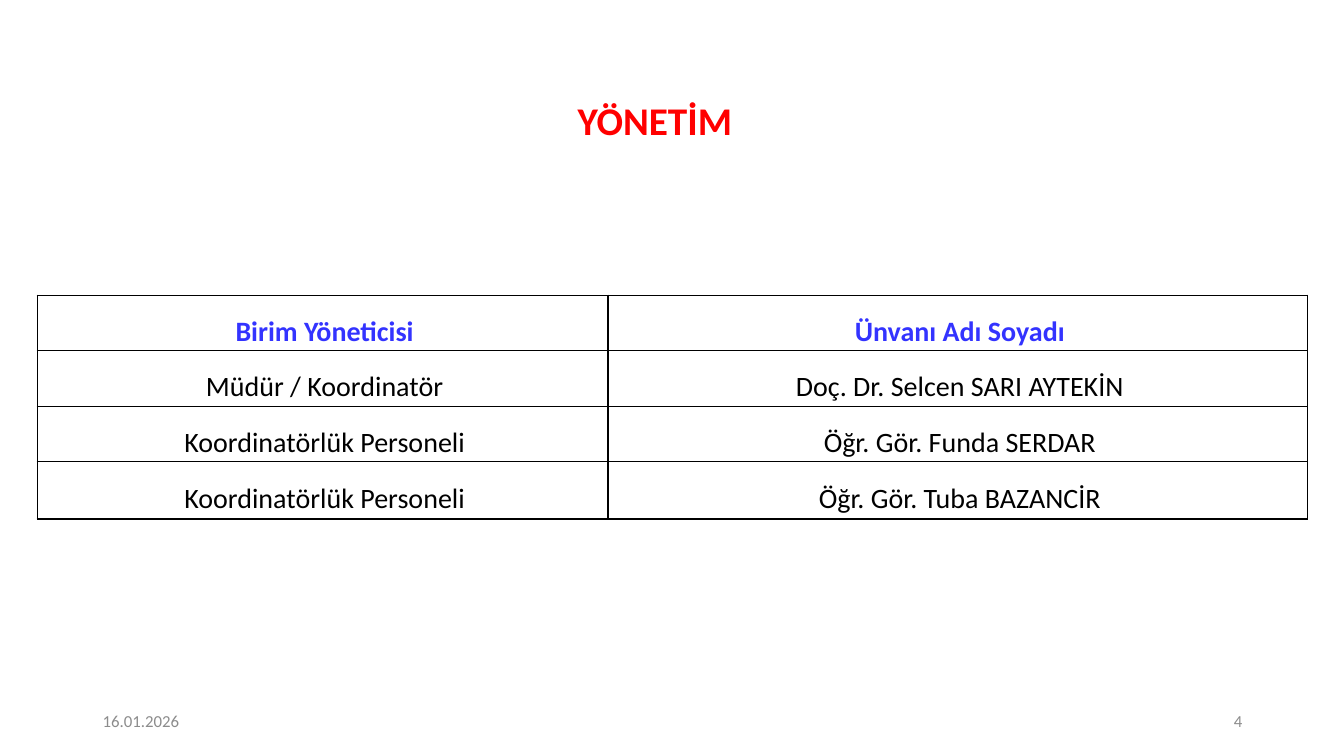
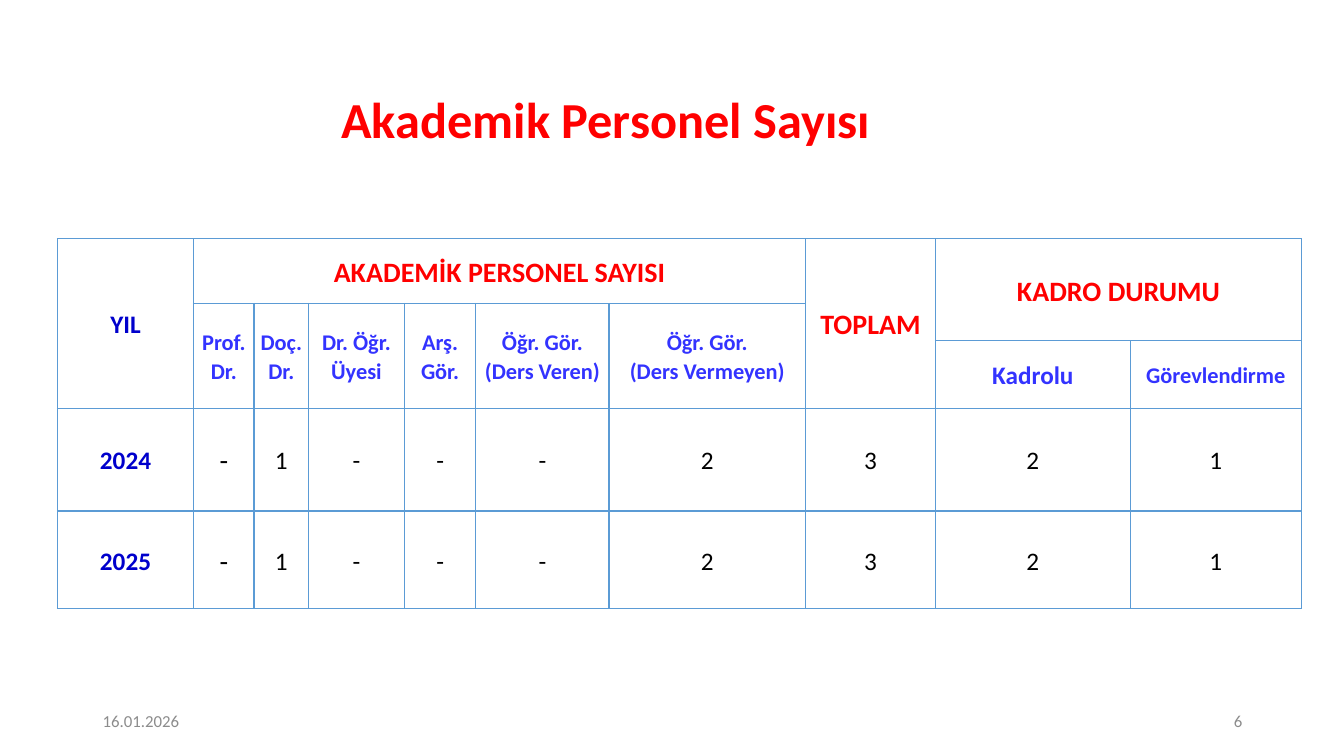
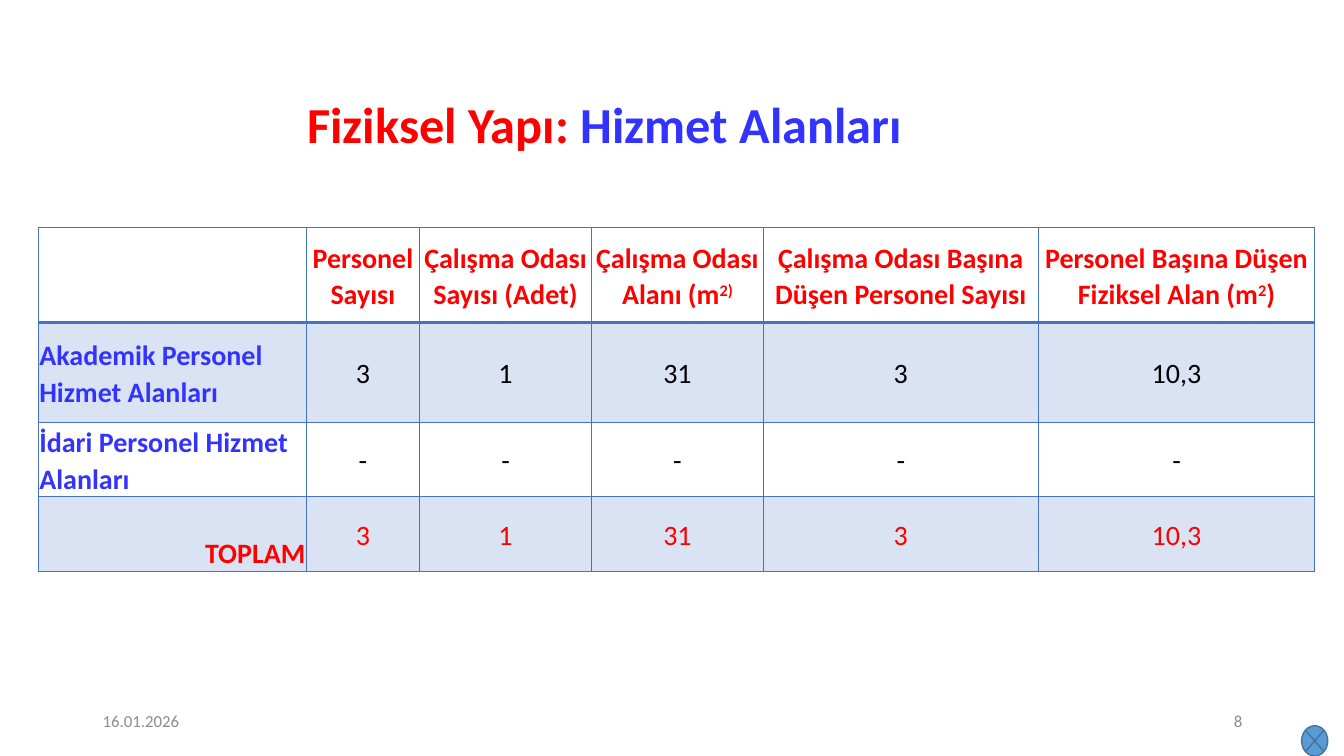
"""Builds three slides on management, academic staff and service areas."""
from lxml import etree
from pptx import Presentation
from pptx.dml.color import RGBColor
from pptx.enum.shapes import MSO_SHAPE
from pptx.enum.text import MSO_ANCHOR, PP_ALIGN
from pptx.oxml.ns import qn
from pptx.util import Inches, Pt

LEFT, CENTER, RIGHT = PP_ALIGN.LEFT, PP_ALIGN.CENTER, PP_ALIGN.RIGHT
MIDDLE, BOTTOM = MSO_ANCHOR.MIDDLE, MSO_ANCHOR.BOTTOM
JUNCTION = MSO_SHAPE.FLOWCHART_SUMMING_JUNCTION

FONT = "Calibri"
DATE = "16.01.2026"
COLORS = {
    "red": "FF0000", "blue": "3333FF", "navy": "0000CC", "black": "000000",
    "gray": "8C8C8C", "sky": "5B9BD5", "steel": "43739E", "royal": "4472C4",
    "band": "DAE3F3",
}
STYLES = {
    "title_small": {"size": 28, "bold": True, "color": "red"},
    "title": {"size": 36, "bold": True, "color": "red"},
    "title_blue": {"size": 36, "bold": True, "color": "blue"},
    "footer": {"size": 12, "bold": False, "color": "gray"},
    "red": {"size": 20, "bold": True, "color": "red"},
    "red_super": {"size": 20, "bold": True, "color": "red", "baseline": 30000},
    "red_plain": {"size": 20, "bold": False, "color": "red"},
    "blue": {"size": 20, "bold": True, "color": "blue"},
    "blue_medium": {"size": 18, "bold": True, "color": "blue"},
    "blue_small": {"size": 16, "bold": True, "color": "blue"},
    "navy": {"size": 18, "bold": True, "color": "navy"},
    "body": {"size": 20, "bold": False, "color": "black"},
    "body_small": {"size": 18, "bold": False, "color": "black"},
}


def rgb(name):
    """Return the named colour."""
    return RGBColor.from_string(COLORS[name])


def format_span(span, style):
    """Apply a named text style to a run."""
    values = dict(STYLES[style])
    span.font.color.rgb = rgb(values.pop("color"))
    baseline = values.pop("baseline", None)
    if baseline:
        span._r.get_or_add_rPr().set("baseline", str(baseline))
    values["size"] = Pt(values["size"])
    for name, value in {"name": FONT, **values}.items():
        setattr(span.font, name, value)


def write(frame, lines, align, spacing=1.0):
    """Write lines, each a list of (text, style) spans, as paragraphs."""
    for index, spans in enumerate(lines):
        para = frame.add_paragraph() if index else frame.paragraphs[0]
        para.alignment = align
        para.line_spacing = spacing
        for text, style in spans:
            span = para.add_run()
            span.text = text
            format_span(span, style)


def add_text(page, at, spans, align=LEFT, spacing=1.0):
    """Add a vertically centred text box with one paragraph."""
    frame = page.shapes.add_textbox(*map(Inches, at)).text_frame
    frame.word_wrap = True
    frame.vertical_anchor = MIDDLE
    write(frame, [spans], align, spacing)


def add_page(deck, number, title_at, title):
    """Add a slide with its title, date and number."""
    page = deck.slides.add_slide(deck.slide_layouts[6])
    add_text(page, title_at, title, CENTER, 0.9)
    add_text(page, (0.92, 6.95, 3, 0.4), [(DATE, "footer")])
    add_text(page, (9.42, 6.95, 3, 0.4), [(str(number), "footer")], RIGHT)
    return page


def set_borders(cell, color, bottom=1, top=1):
    """Draw the four borders of a cell."""
    properties = cell._tc.get_or_add_tcPr()
    for side, width in {"L": 1, "R": 1, "T": top, "B": bottom}.items():
        line = etree.SubElement(properties, qn(f"a:ln{side}"), w=str(Pt(width)))
        fill = etree.SubElement(line, qn("a:solidFill"))
        etree.SubElement(fill, qn("a:srgbClr"), val=COLORS[color])


def add_grid(page, corner, widths, heights, border, margins, heavy_header=False, bands=()):
    """Add an empty bordered table with optional filled rows."""
    size = (sum(widths), sum(heights))
    table = page.shapes.add_table(
        len(heights), len(widths), *map(Inches, (*corner, *size))).table
    table.first_row = table.horz_banding = False
    for column, width in zip(table.columns, widths):
        column.width = Inches(width)
    for index, (row, height) in enumerate(zip(table.rows, heights)):
        row.height = Inches(height)
        for cell in row.cells:
            for side, margin in zip(("left", "top", "right", "bottom"), margins):
                setattr(cell, f"margin_{side}", Inches(margin))
            set_borders(cell, border,
                        bottom=2 if heavy_header and index == 0 else 1,
                        top=2 if heavy_header and index == 1 else 1)
            if index in bands:
                cell.fill.solid()
                cell.fill.fore_color.rgb = rgb("band")
            else:
                cell.fill.background()
    return table


def fill_cell(table, row, column, content, style, align=CENTER, spacing=1.07, anchor=MIDDLE):
    """Write a string, or lines of spans, into a cell."""
    cell = table.cell(row, column)
    cell.vertical_anchor = anchor
    if isinstance(content, str):
        content = [[(line, style)] for line in content.split("\n")]
    write(cell.text_frame, content, align, spacing)


def build_management(deck):
    """Build the management slide."""
    page = add_page(deck, 4, (1.14, 0.84, 10.71, 0.76), [("YÖNETİM", "title_small")])
    rows = [
        ("Birim Yöneticisi", "Ünvanı Adı Soyadı"),
        ("Müdür / Koordinatör", "Doç. Dr. Selcen SARI AYTEKİN"),
        ("Koordinatörlük Personeli", "Öğr. Gör. Funda SERDAR"),
        ("Koordinatörlük Personeli", "Öğr. Gör. Tuba BAZANCİR"),
    ]
    table = add_grid(page, (0.37, 2.93), (5.66, 6.94), (0.55, 0.55, 0.55, 0.57),
                     "black", (0.04, 0, 0, 0))
    for row, texts in enumerate(rows):
        for column, text in enumerate(texts):
            fill_cell(table, row, column, text, "body" if row else "blue", spacing=1.5)


def build_staff(deck):
    """Build the academic staff slide."""
    page = add_page(deck, 6, (0.37, 0.83, 11.28, 0.76),
                    [("Akademik Personel Sayısı", "title")])
    table = add_grid(
        page, (0.57, 2.37),
        (1.35, 0.6, 0.54, 0.95, 0.71, 1.32, 1.95, 1.29, 1.93, 1.7),
        (0.64, 0.37, 0.67, 1.02, 0.97), "sky", (0.01, 0.01, 0.01, 0))
    titles = ("Prof. Dr.", "Doç. Dr.", "Dr. Öğr. Üyesi", "Arş. Gör.",
              "Öğr. Gör.\n(Ders Veren)", "Öğr. Gör.\n(Ders Vermeyen)")
    headers = [
        (0, 0, 2, 0, "YIL", "navy"),
        (0, 1, 0, 6, "AKADEMİK PERSONEL SAYISI", "red"),
        (0, 7, 2, 7, "TOPLAM", "red"),
        (0, 8, 1, 9, "KADRO DURUMU", "red"),
        (2, 8, 2, 8, "Kadrolu", "blue_medium"),
        (2, 9, 2, 9, "Görevlendirme", "blue_small"),
    ]
    headers += [(1, column, 2, column, text, "blue_small")
                for column, text in enumerate(titles, 1)]
    for top, left, bottom, right, text, style in headers:
        if (top, left) != (bottom, right):
            table.cell(top, left).merge(table.cell(bottom, right))
        fill_cell(table, top, left, text, style)
    counts = ("-", "1", "-", "-", "-", "2", "3", "2", "1")
    for row, year in enumerate(("2024", "2025"), 3):
        fill_cell(table, row, 0, year, "navy")
        for column, count in enumerate(counts, 1):
            fill_cell(table, row, column, count, "body" if column == 1 else "body_small")


def build_areas(deck):
    """Build the service areas slide."""
    page = add_page(deck, 8, (0.38, 0.93, 11.24, 0.67),
                    [("Fiziksel Yapı: ", "title"), ("Hizmet Alanları", "title_blue")])
    junction = page.shapes.add_shape(JUNCTION, *map(Inches, (12.91, 7.2, 0.26, 0.3)))
    junction.shadow.inherit = False
    junction.fill.solid()
    junction.fill.fore_color.rgb = rgb("sky")
    junction.line.color.rgb = rgb("steel")
    junction.line.width = Pt(1)

    table = add_grid(page, (0.38, 2.26), (2.66, 1.12, 1.71, 1.7, 2.73, 2.74),
                     (0.94, 0.99, 0.74, 0.74), "royal", (0.01, 0.01, 0.01, 0),
                     heavy_header=True, bands=(1, 3))
    headers = (
        "Personel Sayısı",
        "Çalışma Odası Sayısı (Adet)",
        [[("Çalışma Odası Alanı (m", "red"), ("2)", "red_super")]],
        "Çalışma Odası Başına Düşen Personel Sayısı",
        [[("Personel Başına Düşen Fiziksel Alan (m", "red"), ("2", "red_super"), (")", "red")]],
    )
    for column, header in enumerate(headers, 1):
        fill_cell(table, 0, column, header, "red")
    totals = ("3", "1", "31", "3", "10,3")
    rows = [
        ("Akademik Personel Hizmet Alanları", "blue", LEFT, MIDDLE, totals, "body"),
        ("İdari Personel Hizmet Alanları", "blue", LEFT, MIDDLE, "-" * 5, "body"),
        ("TOPLAM", "red", RIGHT, BOTTOM, totals, "red_plain"),
    ]
    for row, (label, style, align, anchor, values, value_style) in enumerate(rows, 1):
        fill_cell(table, row, 0, label, style, align, anchor=anchor)
        for column, value in enumerate(values, 1):
            fill_cell(table, row, column, value, value_style)


def main():
    """Build and save the deck."""
    deck = Presentation()
    deck.slide_width, deck.slide_height = Inches(13.33), Inches(7.5)
    build_management(deck)
    build_staff(deck)
    build_areas(deck)
    deck.save("out.pptx")


if __name__ == "__main__":
    main()
